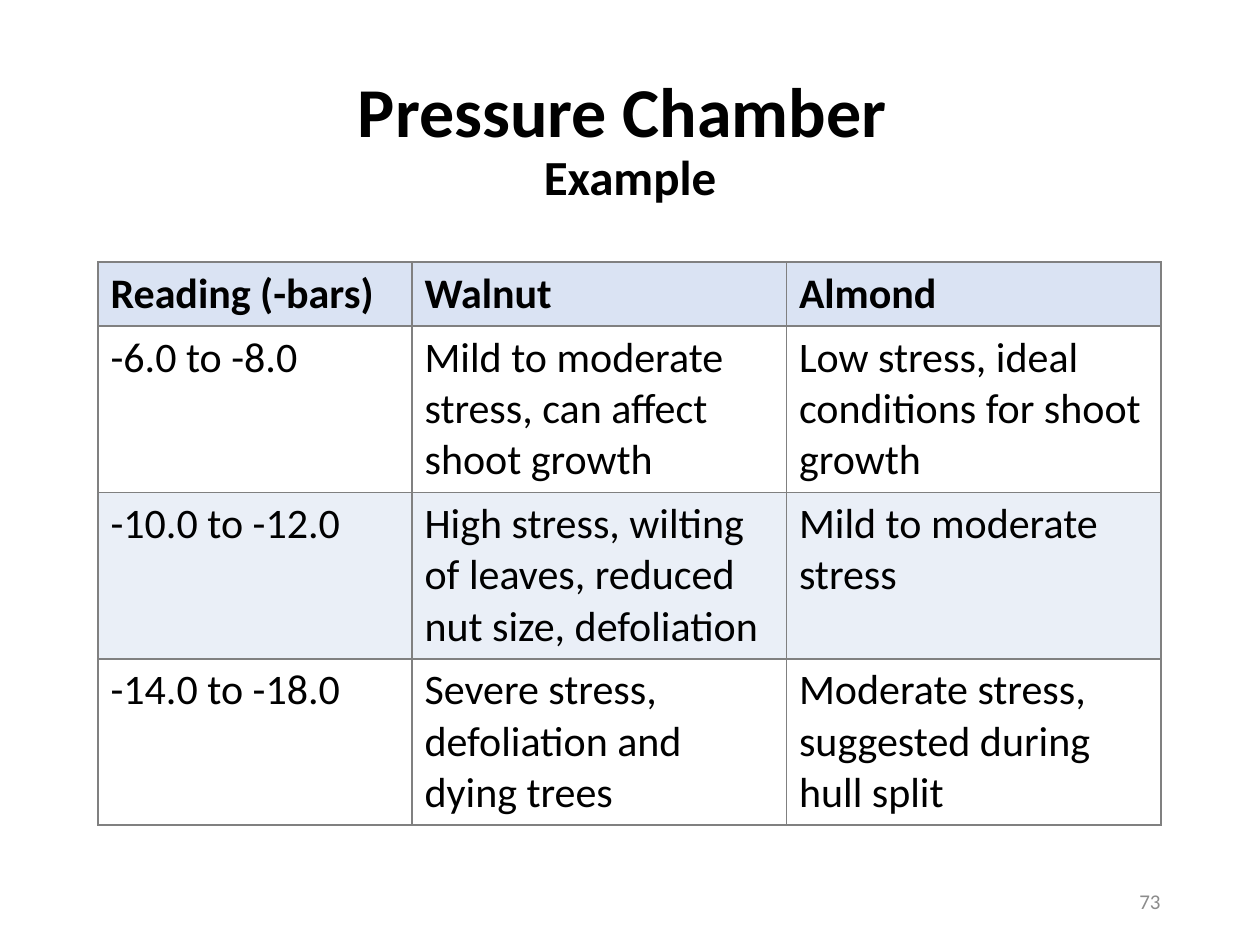
import dataclasses

import pptx
import pptx.dml.color
import pptx.enum.text
import pptx.oxml.ns
import pptx.util
from lxml import etree

PX = 914400 / 126
ALIGN = pptx.enum.text.PP_ALIGN
MIDDLE = pptx.enum.text.MSO_ANCHOR.MIDDLE


@dataclasses.dataclass(frozen=True)
class Theme:
    font: str = "Calibri"
    ink: str = "000000"
    muted: str = "8C8C8C"
    border: str = "808080"
    header_fill: str = "DAE3F3"
    row_fills: tuple = ("FFFFFF", "EAEFF7")
    title_size: int = 40
    subtitle_size: int = 28
    table_size: int = 24
    number_size: int = 12


THEME = Theme()

READINGS = [
    ("Reading (-bars)", "Walnut", "Almond"),
    ("-6.0 to -8.0", "Mild to moderate stress, can affect shoot growth",
     "Low stress, ideal conditions for shoot growth"),
    ("-10.0 to -12.0",
     "High stress, wilting of leaves, reduced nut size, defoliation",
     "Mild to moderate stress"),
    ("-14.0 to -18.0", "Severe stress, defoliation and dying trees",
     "Moderate stress, suggested during hull split"),
]


def emu(px):
    return pptx.util.Emu(round(px * PX))


def rgb(color):
    return pptx.dml.color.RGBColor.from_string(color)


def format_run(run, size, color=THEME.ink, bold=False):
    run.font.name = THEME.font
    run.font.size = pptx.util.Pt(size)
    run.font.color.rgb = rgb(color)
    run.font.bold = bold


def add_border(cell):
    """Draw a 1 pt line on all four sides; lines must precede the fill."""
    properties = cell._tc.get_or_add_tcPr()
    for position, side in enumerate(("lnL", "lnR", "lnT", "lnB")):
        line = etree.Element(pptx.oxml.ns.qn(f"a:{side}"), w="12700")
        fill = etree.SubElement(line, pptx.oxml.ns.qn("a:solidFill"))
        etree.SubElement(fill, pptx.oxml.ns.qn("a:srgbClr"), val=THEME.border)
        properties.insert(position, line)


def place_title(slide, left, top, width, height):
    title = slide.shapes.title
    title.left, title.top = emu(left), emu(top)
    title.width, title.height = emu(width), emu(height)
    frame = title.text_frame
    frame.text = "Pressure Chamber \vExample"
    frame.auto_size = pptx.enum.text.MSO_AUTO_SIZE.NONE
    frame.vertical_anchor = MIDDLE
    paragraph = frame.paragraphs[0]
    paragraph.alignment = ALIGN.CENTER
    paragraph.line_spacing = 0.9
    for run, size in zip(paragraph.runs, (THEME.title_size, THEME.subtitle_size)):
        format_run(run, size, bold=True)
    # The line break takes the size of the first line
    line_break = paragraph._p.find(pptx.oxml.ns.qn("a:br"))
    etree.SubElement(line_break, pptx.oxml.ns.qn("a:rPr"),
                     sz=str(THEME.title_size * 100))


def place_readings(slide, left, top, width, height):
    reading_width, header_height = 314, 64
    crop_width = (width - reading_width) / 2
    row_height = (height - header_height) / (len(READINGS) - 1)
    table = slide.shapes.add_table(
        len(READINGS), len(READINGS[0]),
        emu(left), emu(top), emu(width), emu(height)).table
    for index, column in enumerate(table.columns):
        column.width = emu(crop_width if index else reading_width)
    for index, row in enumerate(table.rows):
        is_header = index == 0
        row.height = emu(header_height if is_header else row_height)
        fill = THEME.header_fill if is_header else THEME.row_fills[(index - 1) % 2]
        for cell, text in zip(row.cells, READINGS[index]):
            cell.text_frame.text = text
            format_run(cell.text_frame.paragraphs[0].runs[0],
                       THEME.table_size, bold=is_header)
            cell.fill.solid()
            cell.fill.fore_color.rgb = rgb(fill)
            add_border(cell)


def place_page_number(slide, left, top, width, height):
    number = slide.shapes.add_textbox(
        emu(left), emu(top), emu(width), emu(height)).text_frame
    number.word_wrap = True
    number.vertical_anchor = MIDDLE
    number.text = "73"
    paragraph = number.paragraphs[0]
    paragraph.alignment = ALIGN.RIGHT
    format_run(paragraph.runs[0], THEME.number_size, THEME.muted)


def main():
    deck = pptx.Presentation()
    deck.slide_width, deck.slide_height = emu(1260), emu(945)
    slide = deck.slides.add_slide(deck.slide_layouts[5])
    place_title(slide, 87, 50, 1086, 183)
    place_readings(slide, 98, 262, 1063, 562)
    place_page_number(slide, 890, 876, 283, 50)
    deck.save("out.pptx")


if __name__ == "__main__":
    main()
